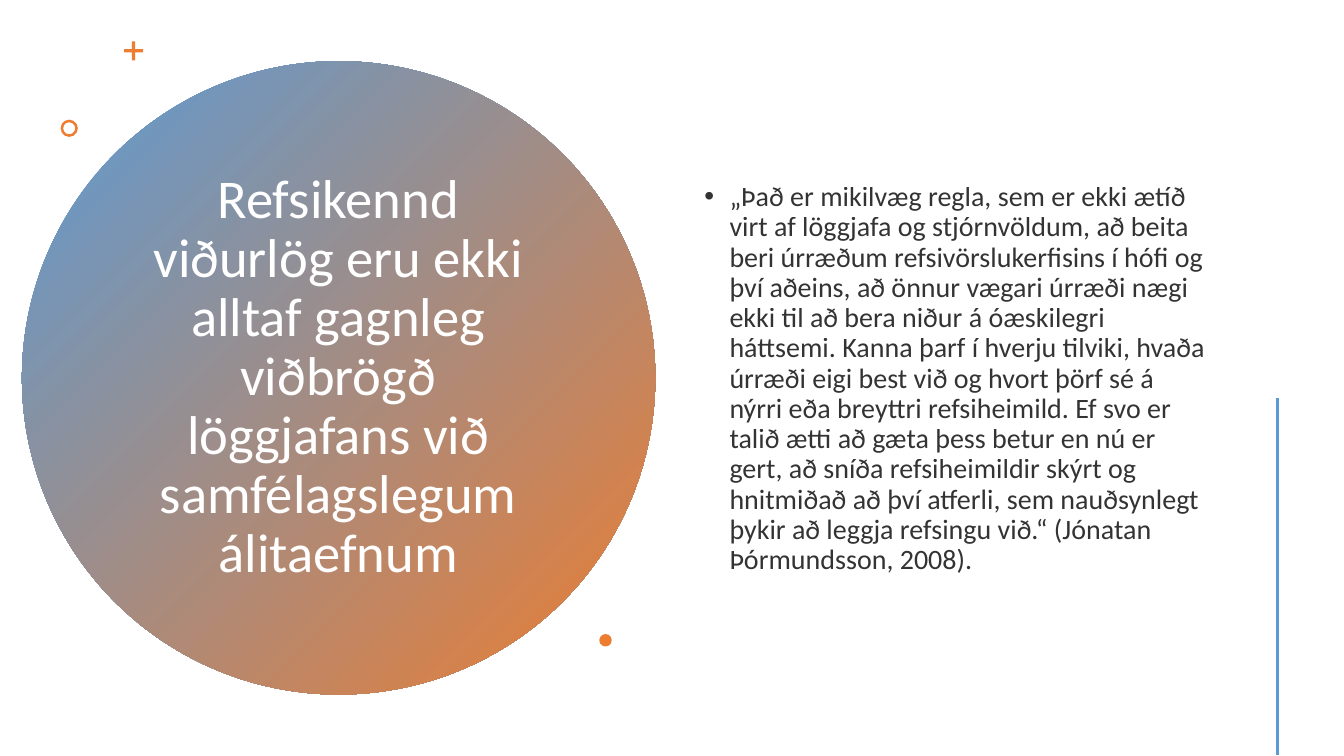
from lxml.etree import SubElement
from pptx import Presentation
from pptx.dml.color import RGBColor
from pptx.enum.shapes import MSO_CONNECTOR, MSO_SHAPE
from pptx.enum.text import MSO_ANCHOR, PP_ALIGN
from pptx.oxml.ns import qn
from pptx.util import Pt

BLUE = "5B9BD5"
ORANGE = "ED7D31"


def color(value):
    return RGBColor.from_string(value)


def add_passage(left, top, width, height, wording, size, ink):
    frame = slide.shapes.add_textbox(Pt(left), Pt(top), Pt(width), Pt(height)).text_frame
    frame.word_wrap = True
    frame.vertical_anchor = MSO_ANCHOR.MIDDLE
    paragraph = frame.paragraphs[0]
    paragraph.line_spacing = 0.9
    run = paragraph.add_run()
    run.text = wording
    run.font.name = "Calibri"
    run.font.size = Pt(size)
    run.font.color.rgb = color(ink)
    return paragraph


presentation = Presentation()
presentation.slide_width = Pt(960)
presentation.slide_height = Pt(540)
slide = presentation.slides.add_slide(presentation.slide_layouts[6])

disc = slide.shapes.add_shape(MSO_SHAPE.OVAL, Pt(15.7), Pt(43.7), Pt(452.4), Pt(452.4))
disc.shadow.inherit = False
disc.line.fill.background()
disc.fill.gradient()
disc.fill.gradient_angle = 315
for stop, tone in zip(disc.fill.gradient_stops, (BLUE, ORANGE)):
    stop.color.rgb = color(tone)

title = add_passage(
    97.9, 101.5, 287.3, 336.2,
    "Refsikennd viðurlög eru ekki alltaf gagnleg viðbrögð löggjafans við "
    "samfélagslegum álitaefnum",
    39, "FFFFFF")
title.alignment = PP_ALIGN.CENTER

quote = add_passage(
    496, 41, 375.8, 459.4,
    "„Það er mikilvæg regla, sem er ekki ætíð virt af löggjafa og stjórnvöldum, "
    "að beita beri úrræðum refsivörslukerfisins í hófi og því aðeins, að önnur "
    "vægari úrræði nægi ekki til að bera niður á óæskilegri háttsemi. Kanna þarf "
    "í hverju tilviki, hvaða úrræði eigi best við og hvort þörf sé á nýrri eða "
    "breyttri refsiheimild. Ef svo er talið ætti að gæta þess betur en nú er gert, "
    "að sníða refsiheimildir skýrt og hnitmiðað að því atferli, sem nauðsynlegt "
    "þykir að leggja refsingu við.“ (Jónatan Þórmundsson, 2008).",
    20, "000000")
indents = quote._p.get_or_add_pPr()
indents.set("marL", str(Pt(18)))
indents.set("indent", str(Pt(-18)))
SubElement(indents, qn("a:buFont")).set("typeface", "Arial")
SubElement(indents, qn("a:buChar")).set("char", "•")
ink = next(quote._p.iter(qn("a:srgbClr")))
SubElement(ink, qn("a:alpha")).set("val", "80000")

ornaments = [
    (MSO_SHAPE.CROSS, 88.6, 29.5, 13.6, 0.42),
    (MSO_SHAPE.DONUT, 43.3, 85.5, 12.3, 0.15),
    (MSO_SHAPE.OVAL, 428.1, 452.9, 8.9, None),
]
for outline, left, top, size, thickness in ornaments:
    ornament = slide.shapes.add_shape(outline, Pt(left), Pt(top), Pt(size), Pt(size))
    ornament.shadow.inherit = False
    ornament.fill.solid()
    ornament.fill.fore_color.rgb = color(ORANGE)
    ornament.line.fill.background()
    if thickness:
        ornament.adjustments[0] = thickness

edge_rule = slide.shapes.add_connector(
    MSO_CONNECTOR.STRAIGHT, Pt(912.3), Pt(284), Pt(912.3), Pt(539.6))
edge_rule.line.color.rgb = color(BLUE)
edge_rule.line.width = Pt(2)
SubElement(edge_rule._element.spPr, qn("a:effectLst"))

presentation.save("out.pptx")
